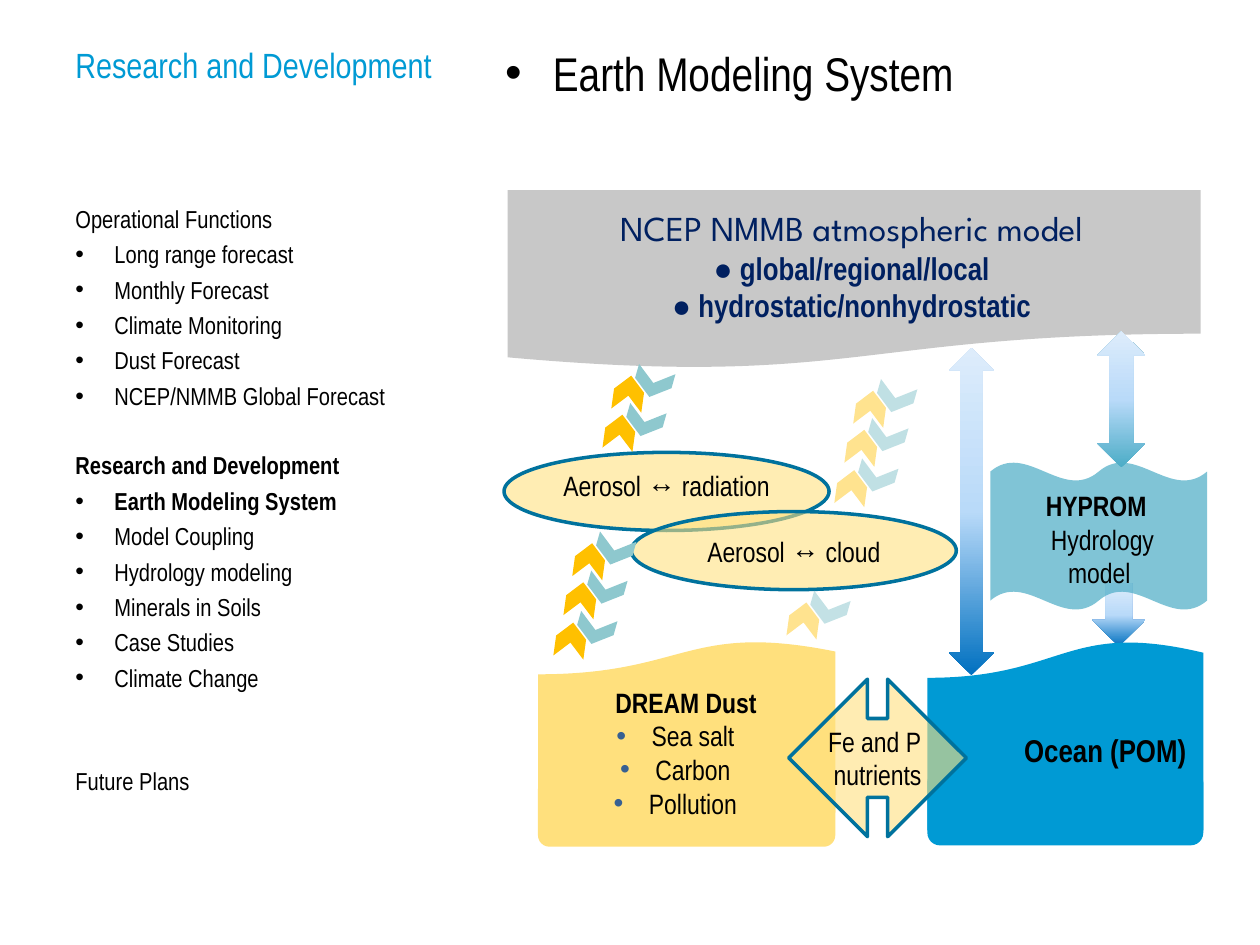
from lxml.etree import SubElement
from pptx import Presentation
from pptx.dml.color import RGBColor
from pptx.enum.shapes import MSO_SHAPE
from pptx.enum.text import PP_ALIGN
from pptx.oxml import parse_xml
from pptx.oxml.ns import nsdecls, qn
from pptx.util import Pt

PX = 9144  # 100 px to the inch
FONT = "Arial Narrow"
COLORS = {
    "black": "000000", "title": "009AD4", "navy": "002060", "atmosphere": "B2B2B2",
    "dust": "FFE07D", "outline": "00729D", "water": "4BACC6", "ocean": "009AD4",
    "up": "FFC000", "down": "8EC8CE", "bullet": "376092", "deep": "0070C0",
    "sky": "B9DAF9", "pale": "DDECFB",
}

FUNCTIONS = ["Long range forecast", "Monthly Forecast", "Climate Monitoring",
             "Dust Forecast", "NCEP/NMMB Global Forecast"]
RESEARCH = ["**Earth Modeling System**", "Model Coupling", "Hydrology modeling",
            "Minerals in Soils", "Case Studies", "Climate Change"]


def rgb(name):
    return RGBColor.from_string(COLORS[name])


def add_bullet(p, margin, hang, color=None):
    pPr = p._p.get_or_add_pPr()
    pPr.set("marL", str(margin * PX))
    pPr.set("indent", str(-hang * PX))
    if color:
        SubElement(SubElement(pPr, qn("a:buClr")), qn("a:srgbClr"), val=COLORS[color])
    SubElement(pPr, qn("a:buFont"), typeface="Arial")
    SubElement(pPr, qn("a:buChar"), char="•")


def write(tf, text, size=16, color="black", font=FONT, align=PP_ALIGN.CENTER,
          before=0, bullet=None):
    """Append a paragraph; parts between ** marks are bold."""
    p = tf.paragraphs[0]
    if p.runs:
        p = tf.add_paragraph()
    p.alignment = align
    p.space_before = Pt(before)
    if bullet:
        add_bullet(p, *bullet)
    for i, part in enumerate(text.split("**")):
        if part:
            r = p.add_run()
            r.text = part
            r.font.name = font
            r.font.size = Pt(size)
            r.font.bold = i % 2 == 1
            r.font.color.rgb = rgb(color)


def add_text(s, x, y, w, h, *lines, wrap=True, **fmt):
    tf = s.shapes.add_textbox(x * PX, y * PX, w * PX, h * PX).text_frame
    tf.word_wrap = wrap
    for line in lines:
        write(tf, line, **fmt)
    return tf


def add_shape(s, kind, x, y, w, h, fill=None, alpha=100, rotation=0, outline=False):
    sp = s.shapes.add_shape(kind, x * PX, y * PX, w * PX, h * PX)
    sp.shadow.inherit = False
    sp.rotation = rotation
    if fill:
        sp.fill.solid()
        sp.fill.fore_color.rgb = rgb(fill)
        if alpha < 100:
            clr = sp._element.spPr.find(".//" + qn("a:srgbClr"))
            SubElement(clr, qn("a:alpha"), val=str(alpha * 1000))
    if outline:
        sp.line.color.rgb = rgb("outline")
        sp.line.width = Pt(2)
    else:
        sp.line.fill.background()
    return sp


def add_exchange_arrow(s, kind, x, y, w, h, base):
    """Vertical arrow that fades from the base colour at its foot."""
    sp = add_shape(s, kind, x, y, w, h)
    sp.fill.background()
    stops = "".join(
        f'<a:gs pos="{pos}"><a:srgbClr val="{COLORS[name]}"/></a:gs>'
        for pos, name in ((0, base), (50000, "sky"), (100000, "pale")))
    grad = parse_xml(f'<a:gradFill {nsdecls("a")} rotWithShape="1"><a:gsLst>{stops}</a:gsLst>'
                     '<a:lin ang="16200000" scaled="0"/></a:gradFill>')
    spPr = sp._element.spPr
    spPr.replace(spPr.find(qn("a:noFill")), grad)


def add_chevrons(s, x, y, count, up_alpha=100, down_alpha=100):
    """Leaning stack of paired up and down chevrons, from the top."""
    for i in range(count):
        left, top = x - i * 15 // 2, y + i * 63 // 2
        add_shape(s, MSO_SHAPE.CHEVRON, left, top, 28, 24, "up", up_alpha, 278)
        add_shape(s, MSO_SHAPE.CHEVRON, left + 22, top - 11, 23, 30, "down",
                  down_alpha, 105.8)


def add_outline(s):
    left = {"align": PP_ALIGN.LEFT}
    item = {"size": 14, "before": 3.4, **left}
    add_text(s, 50, 30, 329, 127, "Research and Development", size=20, color="title", **left)
    add_text(s, 391, 30, 559, 100, "Earth Modeling System", size=27, bullet=(38, 38), **left)
    tf = add_text(s, 50, 157, 329, 513, "Operational Functions", size=14, **left)
    for text in FUNCTIONS:
        write(tf, text, bullet=(31, 31), **item)
    write(tf, "**Research and Development**", **{**item, "before": 23})
    for text in RESEARCH:
        write(tf, text, bullet=(31, 31), **item)
    write(tf, "Future Plans", **{**item, "before": 42.5})


def add_atmosphere(s):
    add_shape(s, MSO_SHAPE.FLOWCHART_DOCUMENT, 403, 151, 550, 142, "atmosphere", 70)
    tf = add_text(s, 433, 159, 486, 104, "NCEP NMMB atmospheric model", size=20,
                  color="navy", font="League Spartan")
    for text in ("● **global/regional/local**", "● **hydrostatic/nonhydrostatic**"):
        write(tf, text, size=18, color="navy")


def add_aerosol(s, x, y, text_y, effect):
    add_shape(s, MSO_SHAPE.OVAL, x, y, 258, 62, "dust", 58, outline=True)
    add_text(s, x + 8, text_y, 242, 37, f"Aerosol **↔** {effect}")


def add_dust(s):
    add_shape(s, MSO_SHAPE.FLOWCHART_DOCUMENT, 427, 508, 236, 137, "dust", rotation=180)
    add_shape(s, MSO_SHAPE.ROUNDED_RECTANGLE, 427, 617, 236, 55, "dust")
    tf = add_text(s, 408, 539, 273, 118, "**DREAM Dust**")
    for text in ("Sea salt", "Carbon", "Pollution"):
        write(tf, text, bullet=(11, 28, "bullet"))


def add_hydrology(s):
    add_shape(s, MSO_SHAPE.DOUBLE_WAVE, 786, 367, 172, 117, "water", 70)
    add_text(s, 794, 383, 157, 91, "**HYPROM **", " Hydrology model")


def add_ocean(s):
    add_shape(s, MSO_SHAPE.ROUNDED_RECTANGLE, 736, 611, 219, 60, "ocean")
    add_shape(s, MSO_SHAPE.FLOWCHART_DOCUMENT, 736, 508, 219, 151, "ocean", rotation=180)
    add_text(s, 803, 575, 150, 40, "**Ocean (POM)**", size=18, wrap=False,
             align=PP_ALIGN.LEFT)


def add_nutrients(s):
    add_shape(s, MSO_SHAPE.LEFT_RIGHT_ARROW, 626, 539, 141, 125, "dust", 59, outline=True)
    add_text(s, 639, 570, 115, 64, "Fe and P ", "nutrients")


def main():
    prs = Presentation()
    prs.slide_width, prs.slide_height = 1000 * PX, 750 * PX
    s = prs.slides.add_slide(prs.slide_layouts[6])
    add_outline(s)
    add_exchange_arrow(s, MSO_SHAPE.DOWN_ARROW, 867, 463, 42, 50, "deep")
    add_atmosphere(s)
    add_aerosol(s, 400, 359, 367, "radiation")
    add_aerosol(s, 501, 406, 419, "cloud")
    add_dust(s)
    add_hydrology(s)
    add_ocean(s)
    add_chevrons(s, 485, 300, 2)
    add_chevrons(s, 454, 433, 3)
    add_chevrons(s, 677, 312, 3, 44, 55)
    add_chevrons(s, 624, 480, 1, 44, 53)
    add_exchange_arrow(s, MSO_SHAPE.UP_DOWN_ARROW, 753, 276, 36, 260, "deep")
    add_nutrients(s)
    add_exchange_arrow(s, MSO_SHAPE.UP_DOWN_ARROW, 871, 263, 38, 108, "water")
    prs.save("out.pptx")


if __name__ == "__main__":
    main()
